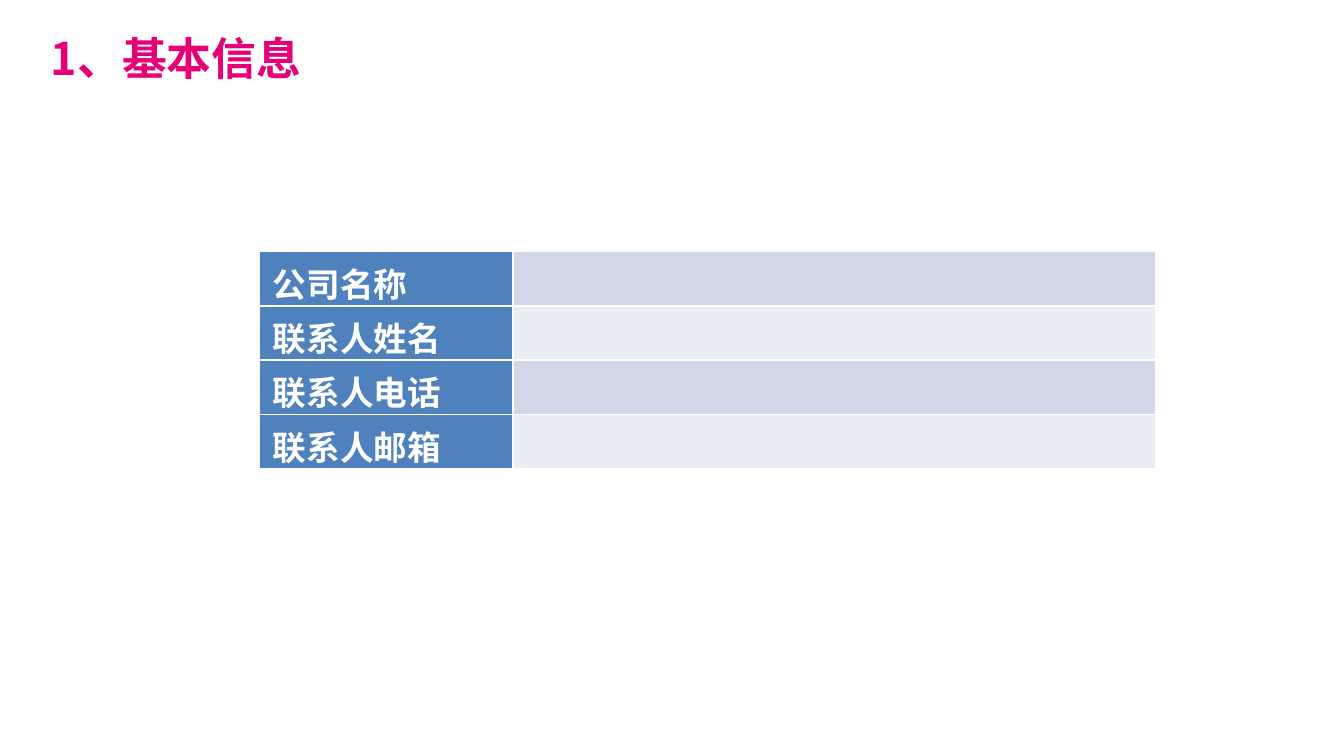
from dataclasses import dataclass

from lxml import etree
from pptx import Presentation
from pptx.dml.color import RGBColor
from pptx.enum.text import MSO_ANCHOR
from pptx.oxml.ns import qn
from pptx.util import Pt

TOP = MSO_ANCHOR.TOP


@dataclass(frozen=True)
class Theme:
    font: str = "Noto Sans CJK SC"
    title: str = "E50078"
    label: str = "4F81BD"
    bands: tuple = ("D0D8E8", "E9EDF4")
    white: str = "FFFFFF"
    title_size: int = 24
    label_size: int = 18


THEME = Theme()
LABELS = ("公司名称", "联系人姓名", "联系人电话", "联系人邮箱")
COLUMN_WIDTHS = (136, 344.2)
ROW_HEIGHT = 29.16


def write(tf, text, *, size, color, bold=True, before=0):
    p = tf.paragraphs[0]
    p.space_before = Pt(before)
    r = p.add_run()
    r.text = text
    r.font.size = Pt(size)
    r.font.bold = bold
    r.font.color.rgb = RGBColor.from_string(color)
    r.font.name = THEME.font
    ea = etree.SubElement(r.font._element, qn("a:ea"))
    ea.set("typeface", THEME.font)


def add_title(s, text):
    tf = s.shapes.add_textbox(Pt(20.16), Pt(15.12), Pt(283.68), Pt(44.64)).text_frame
    tf.word_wrap = True
    tf.vertical_anchor = TOP
    tf.margin_top = Pt(1.2)
    write(tf, text, size=THEME.title_size, color=THEME.title)


def fill_cell(cell, color):
    cell.fill.solid()
    cell.fill.fore_color.rgb = RGBColor.from_string(color)


def add_borders(cell, color, width=1):
    """Insert the four edges ahead of the fill, as the schema orders them."""
    tc_pr = cell._tc.get_or_add_tcPr()
    for i, edge in enumerate(("a:lnL", "a:lnR", "a:lnT", "a:lnB")):
        ln = etree.Element(qn(edge), w=str(Pt(width)))
        fill = etree.SubElement(ln, qn("a:solidFill"))
        etree.SubElement(fill, qn("a:srgbClr"), val=color)
        tc_pr.insert(i, ln)


def add_contact_table(s, labels):
    table = s.shapes.add_table(
        len(labels), len(COLUMN_WIDTHS), Pt(138.96), Pt(134.64),
        Pt(sum(COLUMN_WIDTHS)), Pt(ROW_HEIGHT * len(labels))).table
    table.first_row = False
    table.first_col = True
    for col, width in zip(table.columns, COLUMN_WIDTHS):
        col.width = Pt(width)
    for i, label in enumerate(labels):
        table.rows[i].height = Pt(ROW_HEIGHT)
        name, value = table.rows[i].cells
        write(name.text_frame, label, size=THEME.label_size, color=THEME.white)
        fill_cell(name, THEME.label)
        fill_cell(value, THEME.bands[i % 2])
        for cell in (name, value):
            add_borders(cell, THEME.white)


def main():
    prs = Presentation()
    prs.slide_width, prs.slide_height = Pt(720), Pt(405)
    s = prs.slides.add_slide(prs.slide_layouts[6])
    add_title(s, "1、基本信息")
    add_contact_table(s, LABELS)
    prs.save("out.pptx")


if __name__ == "__main__":
    main()
